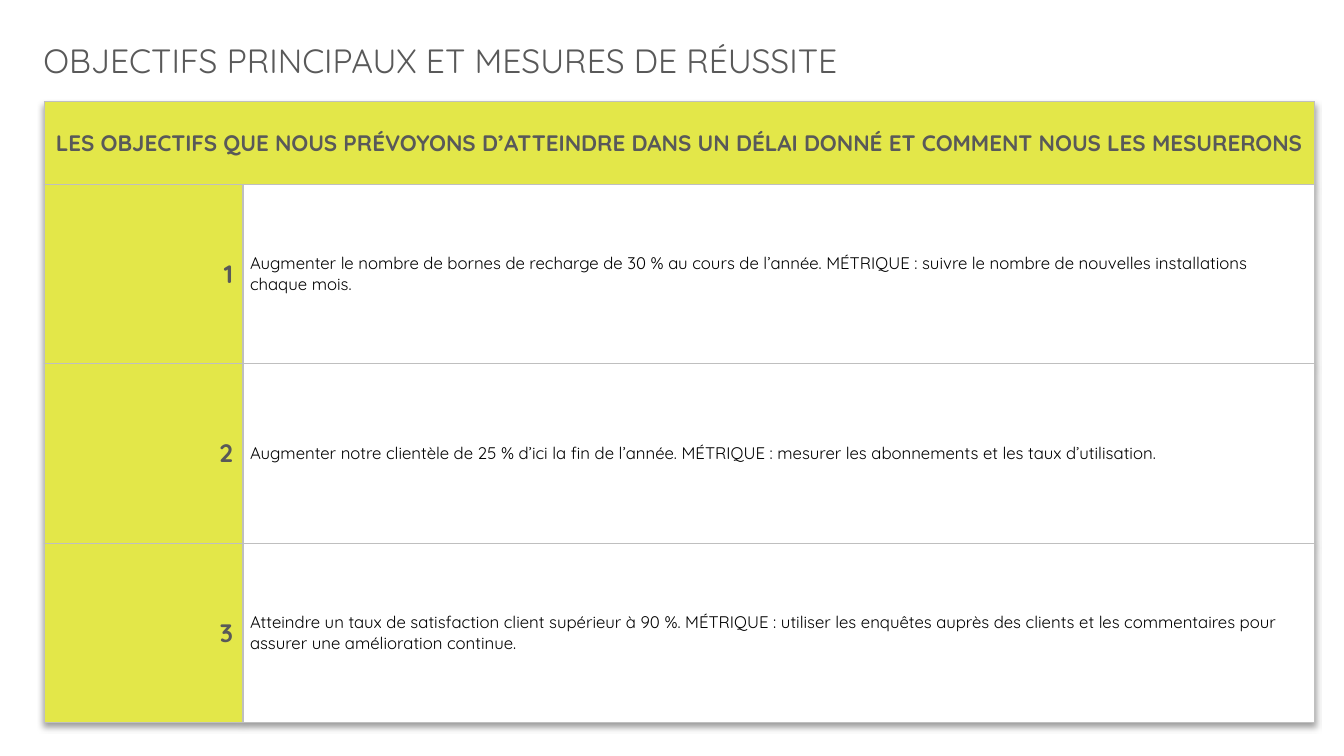
from lxml import etree
from pptx import Presentation
from pptx.dml.color import RGBColor
from pptx.enum.text import MSO_ANCHOR, PP_ALIGN
from pptx.util import Inches, Pt

MIDDLE = MSO_ANCHOR.MIDDLE
LEFT, CENTER, RIGHT = PP_ALIGN.LEFT, PP_ALIGN.CENTER, PP_ALIGN.RIGHT
FONT = "Quicksand"
GREY, LIME, WHITE, BLACK = "595959", "E3E749", "FFFFFF", "000000"
NS = 'xmlns:a="http://schemas.openxmlformats.org/drawingml/2006/main"'
SHADOW = f"""<a:effectLst {NS}><a:outerShdw blurRad="50800" dist="38100" dir="5400000"
algn="t" rotWithShape="0"><a:srgbClr val="000000"><a:alpha val="40000"/></a:srgbClr>
</a:outerShdw></a:effectLst>"""
HEADER = "LES OBJECTIFS QUE NOUS PRÉVOYONS D’ATTEINDRE DANS UN DÉLAI DONNÉ ET COMMENT NOUS LES MESURERONS"
GOALS = [
    "Augmenter le nombre de bornes de recharge de 30 % au cours de l’année. MÉTRIQUE : suivre le nombre de nouvelles installations chaque mois.",
    "Augmenter notre clientèle de 25 % d’ici la fin de l’année. MÉTRIQUE : mesurer les abonnements et les taux d’utilisation.",
    "Atteindre un taux de satisfaction client supérieur à 90 %. MÉTRIQUE : utiliser les enquêtes auprès des clients et les commentaires pour assurer une amélioration continue.",
]


def write(frame, text, size, color, bold, align):
    frame.text = text
    para = frame.paragraphs[0]
    para.alignment = align
    para.font.name = FONT
    para.font.size = Pt(size)
    para.font.bold = bold
    para.font.color.rgb = RGBColor.from_string(color)


def style(cell, fill):
    cell.vertical_anchor = MIDDLE
    cell.fill.solid()
    cell.fill.fore_color.rgb = RGBColor.from_string(fill)
    props = cell._tc.get_or_add_tcPr()
    for spot, side in enumerate("LRTB"):
        props.insert(spot, etree.fromstring(
            f'<a:ln{side} {NS} w="12700"><a:solidFill><a:srgbClr val="BFBFBF"/>'
            f'</a:solidFill></a:ln{side}>'))


deck = Presentation()
deck.slide_width, deck.slide_height = Inches(13.33), Inches(7.5)
slide = deck.slides.add_slide(deck.slide_layouts[5])

title = slide.shapes.title
title.left, title.top = Inches(0.33), Inches(0.35)
title.width, title.height = Inches(8.08), Inches(0.5)
title.text_frame.vertical_anchor = MSO_ANCHOR.TOP
write(title.text_frame, "OBJECTIFS PRINCIPAUX ET MESURES DE RÉUSSITE", 24, GREY, False, LEFT)

table = slide.shapes.add_table(
    4, 2, Inches(0.44), Inches(1.01), Inches(12.6), Inches(6.16)).table
table._tbl.tblPr.insert(0, etree.fromstring(SHADOW))
for col, width in zip(table.columns, (1.97, 10.63)):
    col.width = Inches(width)
for row, height in zip(table.rows, (0.82, 1.78, 1.78, 1.78)):
    row.height = Inches(height)

head = table.cell(0, 0)
head.merge(table.cell(0, 1))
write(head.text_frame, HEADER, 16, GREY, True, CENTER)
style(head, LIME)
style(table.cell(0, 1), LIME)

for num, goal in enumerate(GOALS, 1):
    mark, body = table.cell(num, 0), table.cell(num, 1)
    write(mark.text_frame, str(num), 18, GREY, True, RIGHT)
    style(mark, LIME)
    write(body.text_frame, goal, 12, BLACK, False, LEFT)
    style(body, WHITE)
    body.margin_left = body.margin_right = Inches(0.07)
    body.margin_top = body.margin_bottom = 0

deck.save("out.pptx")
